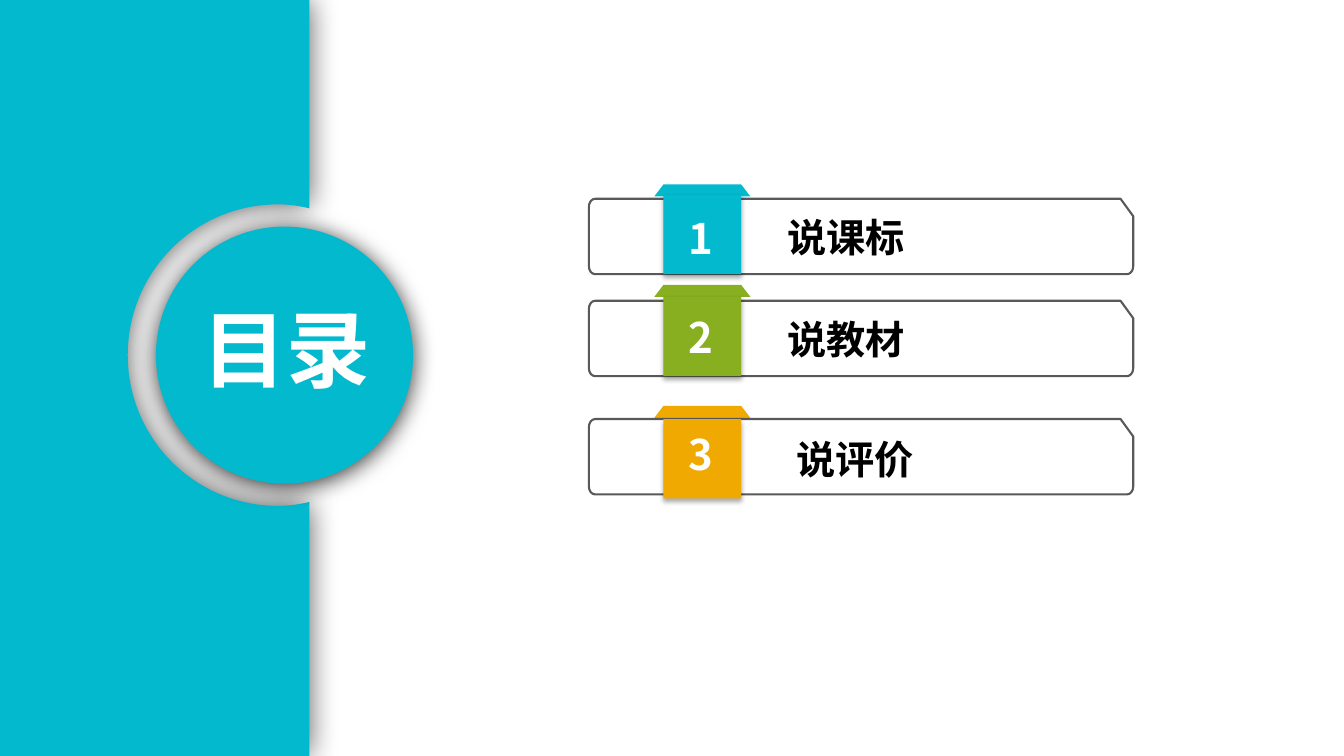
from dataclasses import dataclass

from lxml.etree import SubElement
from pptx import Presentation
from pptx.dml.color import RGBColor
from pptx.enum.shapes import MSO_SHAPE as Preset
from pptx.enum.text import MSO_ANCHOR as Anchor, MSO_AUTO_SIZE as AutoSize, PP_ALIGN as Align
from pptx.oxml.ns import qn
from pptx.util import Cm, Pt

TEAL = RGBColor(0x03, 0xB9, 0xCE)
GREEN = RGBColor(0x88, 0xAF, 0x20)
AMBER = RGBColor(0xF0, 0xA9, 0x01)
GREY = RGBColor(0x59, 0x59, 0x59)
WHITE = RGBColor(0xFF, 0xFF, 0xFF)
BLACK = RGBColor(0x00, 0x00, 0x00)
FONT = "Noto Sans CJK SC"


@dataclass
class Entry:
    """One contents row; offsets in cm are measured from the card's corner."""
    number: str
    label: str
    color: RGBColor
    top: float
    ear_dy: float
    tab_dy: float
    number_dy: float
    label_dx: float
    label_dy: float
    label_width: float
    label_inset: float


ENTRIES = [
    Entry("1", "说课标", TEAL, 5.01, -0.36, -0.1, 0.25, 4.8, 0.27, 6.63, 0.2),
    Entry("2", "说教材", GREEN, 7.58, -0.4, -0.1, 0.16, 4.37, 0.26, 9.35, 0.63),
    Entry("3", "说评价", AMBER, 10.56, -0.33, 0, 0.15, 4.8, 0.3, 4.98, 0.43),
]


def add_shadow(shape, opacity, blur, distance, direction):
    effects = shape.element.spPr.find(qn("a:effectLst"))
    shadow = SubElement(effects, qn("a:outerShdw"), blurRad=str(Pt(blur)),
                        dist=str(Pt(distance)), dir=str(direction * 60000),
                        algn="ctr", rotWithShape="0")
    color = SubElement(shadow, qn("a:srgbClr"), val=str(BLACK))
    SubElement(color, qn("a:alpha"), val=str(opacity * 1000))


def paint(shape, fill=None, line=None):
    if fill is None:
        shape.fill.background()
    else:
        shape.fill.solid()
        shape.fill.fore_color.rgb = fill
    if line is None:
        shape.line.fill.background()
    else:
        shape.line.color.rgb = line
        shape.line.width = Pt(1.5)
    shape.shadow.inherit = False
    return shape


def add_outline(slide, start, segments):
    """Closed outline; a segment of one point is a line, of three a Bézier curve."""
    points = [(Cm(x), Cm(y)) for segment in segments for x, y in segment]
    builder = slide.shapes.build_freeform(Cm(start[0]), Cm(start[1]), scale=1.0)
    builder.add_line_segments(points, close=True)
    shape = builder.convert_to_shape()
    lines = iter(list(shape.element.iter(qn("a:lnTo"))))
    for segment in segments:
        parts = [next(lines) for _ in segment]
        if len(parts) == 3:
            outline = parts[0].getparent()
            curve = SubElement(outline, qn("a:cubicBezTo"))
            parts[0].addprevious(curve)
            for part in parts:
                curve.append(part[0])
                outline.remove(part)
    return shape


def write(box, text, size, color, align=Align.LEFT):
    frame = box.text_frame
    frame.text = text
    para = frame.paragraphs[0]
    para.alignment = align
    span = para.runs[0]
    span.font.size = Pt(size)
    span.font.bold = True
    span.font.name = FONT
    span.font.color.rgb = color
    SubElement(span.font._element, qn("a:ea"), typeface=FONT)


def add_text(slide, x, y, width, height, text, size, color, inset=0.18):
    box = slide.shapes.add_textbox(Cm(x), Cm(y), Cm(width), Cm(height))
    frame = box.text_frame
    frame.word_wrap = True
    frame.margin_left, frame.margin_right = Cm(inset), Cm(0.18)
    frame.margin_top = frame.margin_bottom = Cm(0.1)
    write(box, text, size, color)


def add_side_panel(slide, width, height):
    # Panel with a round notch in its right edge, symmetric about the middle
    middle = 8.95
    upper = [(width, 5.25), (7.54, 5.19), (7.28, 5.15), (7.01, 5.15),
             (4.91, 5.15), (3.22, 6.85), (3.22, middle)]
    lower = [(x, 2 * middle - y) for x, y in reversed(upper)]
    panel = add_outline(slide, (0, 0), [
        [(width, 0)], upper[:1], upper[1:4], upper[4:],
        lower[1:4], lower[4:], [(width, height)], [(0, height)]])
    paint(panel, TEAL)
    add_shadow(panel, 70, 22, 1, 180)

    # Disc inside the notch
    disc = slide.shapes.add_shape(Preset.OVAL, Cm(3.93), Cm(5.71), Cm(6.48), Cm(6.48))
    paint(disc, TEAL)
    add_shadow(disc, 80, 17, 2.2, 90)

    # Title on top of the disc
    title = slide.shapes.title
    title.left, title.top, title.width, title.height = Cm(4.83), Cm(7.37), Cm(4.78), Cm(2.82)
    title.text_frame.word_wrap = False
    title.text_frame.auto_size = AutoSize.NONE
    title.text_frame.vertical_anchor = Anchor.TOP
    write(title, "目录", 60, WHITE, Align.CENTER)
    disc.element.addnext(title.element)


def add_entry(slide, entry, left, width, height):
    top, right, bottom = entry.top, left + width, entry.top + height
    tab_left, tab_width = left + 1.88, 1.96

    # Folded ear above the tab
    ear_top, ear_bottom = top + entry.ear_dy, top + entry.ear_dy + 0.3
    tab_right = tab_left + tab_width
    ear = add_outline(slide, (tab_left, ear_top), [
        [(tab_right, ear_top)], [(tab_right + 0.23, ear_bottom)],
        [(tab_left - 0.23, ear_bottom)]])
    paint(ear, entry.color)

    # Card with three round corners and one cut corner
    rx, ry = 0.16, 0.21
    kx, ky = 0.07, 0.09
    card = add_outline(slide, (left + rx, top), [
        [(right - 0.32, top)], [(right, top + 0.44)], [(right, bottom - ry)],
        [(right, bottom - ky), (right - kx, bottom), (right - rx, bottom)],
        [(left + rx, bottom)],
        [(left + kx, bottom), (left, bottom - ky), (left, bottom - ry)],
        [(left, top + ry)],
        [(left, top + ky), (left + kx, top), (left + rx, top)]])
    paint(card, line=GREY)

    # Coloured tab, label and number
    tab = slide.shapes.add_shape(Preset.RECTANGLE, Cm(tab_left), Cm(top + entry.tab_dy),
                                 Cm(tab_width), Cm(2))
    paint(tab, entry.color)
    add_shadow(tab, 32, 3.5, 2.2, 90)
    add_text(slide, left + entry.label_dx, top + entry.label_dy, entry.label_width, 1.37,
             entry.label, 28, BLACK, entry.label_inset)
    add_text(slide, left + 2.32, top + entry.number_dy, 1.35, 1.47,
             entry.number, 30, WHITE)


def main():
    deck = Presentation()
    deck.slide_width, deck.slide_height = Cm(33.87), Cm(19.05)
    slide = deck.slides.add_slide(deck.slide_layouts.get_by_name("Title Only"))
    add_side_panel(slide, 7.8, 19.05)
    for entry in ENTRIES:
        add_entry(slide, entry, 14.84, 13.72, 1.9)
    deck.save("out.pptx")


if __name__ == "__main__":
    main()
